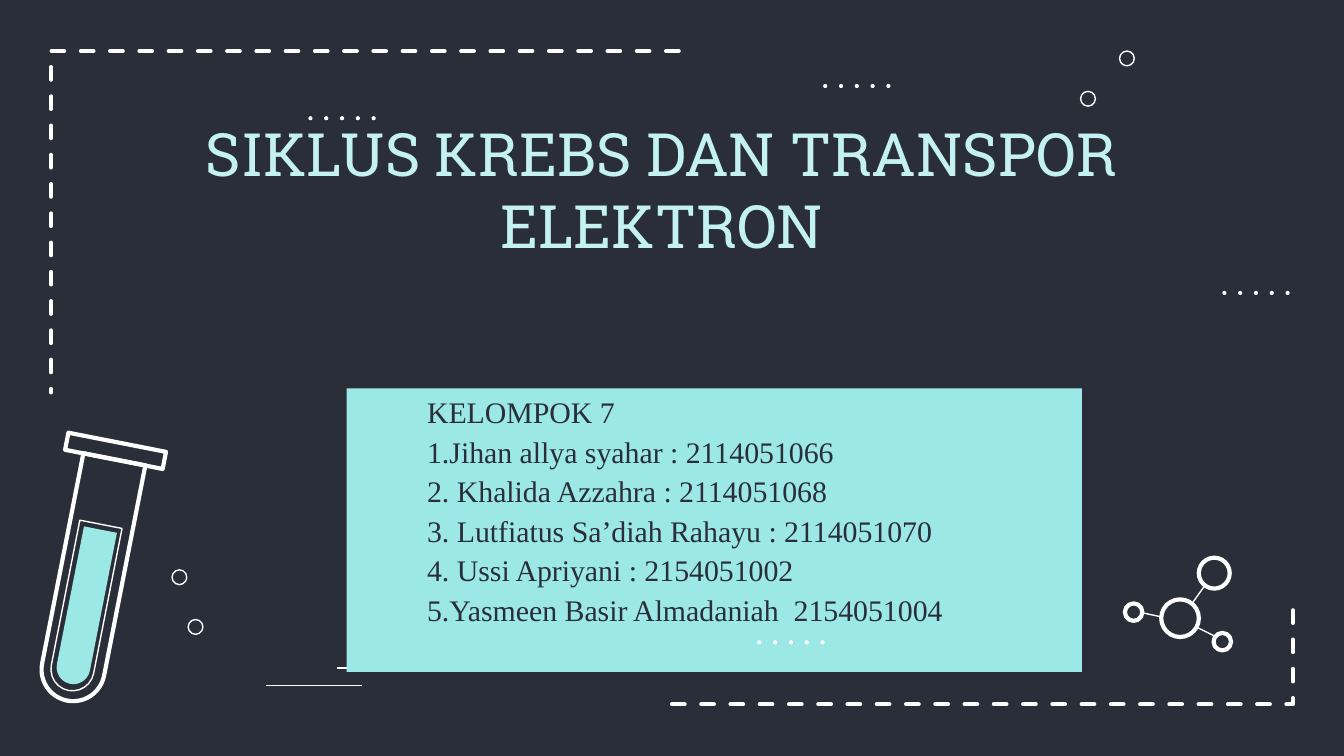
from pptx import Presentation, util as u
from pptx.dml.color import RGBColor
from pptx.enum import dml, shapes, text
from pptx.oxml.ns import qn
from lxml import etree

I = u.Inches
HUES = {"night": "2A2E38", "white": "FFFFFF", "mint": "9CE8E7", "pale": "C4F1F1"}
KIND = shapes.MSO_SHAPE

deck = Presentation()
deck.slide_width, deck.slide_height = I(10), I(10 * 9 / 16)
slide = deck.slides.add_slide(deck.slide_layouts[6])
back = slide.background.fill
back.solid()
back.fore_color.rgb = RGBColor.from_string(HUES["night"])
art = slide.shapes


def style(shape, fill=None, line=None):
    """Set the fill by hue name and a white outline by width in points."""
    shape.shadow.inherit = False
    if fill:
        shape.fill.solid()
        shape.fill.fore_color.rgb = RGBColor.from_string(HUES[fill])
    else:
        shape.fill.background()
    if line:
        shape.line.color.rgb = RGBColor.from_string(HUES["white"])
        shape.line.width = u.Pt(line)
    else:
        shape.line.fill.background()
    return shape


def stroke(x1, y1, x2, y2):
    """Draw a thin white line."""
    line = art.add_connector(shapes.MSO_CONNECTOR.STRAIGHT, I(x1), I(y1), I(x2), I(y2))
    line.line.color.rgb = RGBColor.from_string(HUES["white"])
    line.line.width = u.Pt(0.75)
    etree.SubElement(line._element.spPr, qn("a:effectLst"))


# Dashed corner frames
for start, *rest in [
    ((5.05, 0.38), (0.38, 0.38), (0.38, 2.92)),
    ((5, 5.24), (9.62, 5.24), (9.62, 4.43)),
]:
    pen = art.build_freeform(I(start[0]), I(start[1]))
    pen.add_line_segments([(I(x), I(y)) for x, y in rest], close=False)
    frame = style(pen.convert_to_shape(), line=2.25)
    frame.line.dash_style = dml.MSO_LINE.DASH
    frame.line._get_or_add_ln().set("cap", "rnd")

# Short lines beside the name box
stroke(1.98, 5.1, 2.69, 5.1)
stroke(2.51, 4.97, 2.93, 4.97)

# Test tube
for kind, x, y, w, h, fill, line in [
    (KIND.ROUND_2_SAME_RECTANGLE, 0.44, 3.4, 0.47, 1.83, None, 2.25),
    (KIND.ROUND_2_SAME_RECTANGLE, 0.51, 3.93, 0.25, 1.17, "mint", None),
    (KIND.ROUND_2_SAME_RECTANGLE, 0.47, 3.89, 0.32, 1.26, None, 0.75),
    (KIND.RECTANGLE, 0.49, 3.29, 0.74, 0.13, None, 2.25),
]:
    part = style(art.add_shape(kind, I(x), I(y), I(w), I(h)), fill, line)
    part.rotation = 11.1
    if kind == KIND.ROUND_2_SAME_RECTANGLE:
        part.adjustments[0], part.adjustments[1] = 0, 0.5

# Title and name box
title = art.add_textbox(I(1.02), I(0.94), I(7.81), I(1.46))
names = style(art.add_shape(KIND.RECTANGLE, I(2.58), I(2.89), I(5.47), I(2.11)), "mint")
TEAM = [
    "KELOMPOK 7",
    "1.Jihan allya syahar : 2114051066",
    "2. Khalida Azzahra : 2114051068",
    "3. Lutfiatus Sa’diah Rahayu : 2114051070",
    "4. Ussi Apriyani : 2154051002",
    "5.Yasmeen Basir Almadaniah  2154051004",
]
BLOCKS = [
    (title, ["SIKLUS KREBS DAN TRANSPOR ELEKTRON"], "pale", 0,
     {"vertical_anchor": text.MSO_ANCHOR.MIDDLE, "margin_bottom": I(0.63),
      "margin_top": I(0.1)},
     {"alignment": text.PP_ALIGN.CENTER},
     {"name": "Roboto Slab", "size": u.Pt(32)}),
    (names, TEAM, "night", 0.5,
     {"vertical_anchor": text.MSO_ANCHOR.TOP, "margin_bottom": I(0.1),
      "margin_top": I(0.04)},
     {"alignment": text.PP_ALIGN.JUSTIFY, "space_after": u.Pt(2)},
     {"name": "Times New Roman", "size": u.Pt(16)}),
]
for box, lines, hue, left, frame_set, para_set, font_set in BLOCKS:
    frame = box.text_frame
    frame.word_wrap = True
    for key, val in {**frame_set, "margin_left": I(0.1), "margin_right": I(0.1)}.items():
        setattr(frame, key, val)
    for n, words in enumerate(lines):
        para = frame.add_paragraph() if n else frame.paragraphs[0]
        para._p.get_or_add_pPr().set("marL", str(I(left)))
        run = para.add_run()
        run.text = words
        for key, val in para_set.items():
            setattr(para, key, val)
        for key, val in font_set.items():
            setattr(run.font, key, val)
        run.font.color.rgb = RGBColor.from_string(HUES[hue])

# Rings: molecule atoms, then loose bubbles
for x, y, size, line in [
    (8.64, 4.46, 0.28, 2.25), (8.92, 4.15, 0.23, 2.25),
    (9.03, 4.71, 0.13, 2.25), (8.37, 4.49, 0.13, 2.25),
    (8.33, 0.38, 0.11, 0.75), (8.04, 0.68, 0.11, 0.75),
    (1.4, 4.61, 0.11, 0.75), (1.28, 4.24, 0.11, 0.75),
]:
    style(art.add_shape(KIND.OVAL, I(x), I(y), I(size), I(size)), line=line)

# Molecule bonds
for ends in [(8.87, 4.49, 8.97, 4.35), (9.05, 4.74, 8.91, 4.67), (8.64, 4.59, 8.5, 4.56)]:
    stroke(*ends)

# Rows of five dots
for x, y in [(9.1, 2.17), (6.13, 0.63), (5.64, 4.77), (2.3, 0.87)]:
    for n in range(5):
        dot = art.add_shape(KIND.OVAL, I(x + 0.47 * n / 4), I(y), I(0.02), I(0.02))
        style(dot, "white", 0.75)

deck.save("out.pptx")
